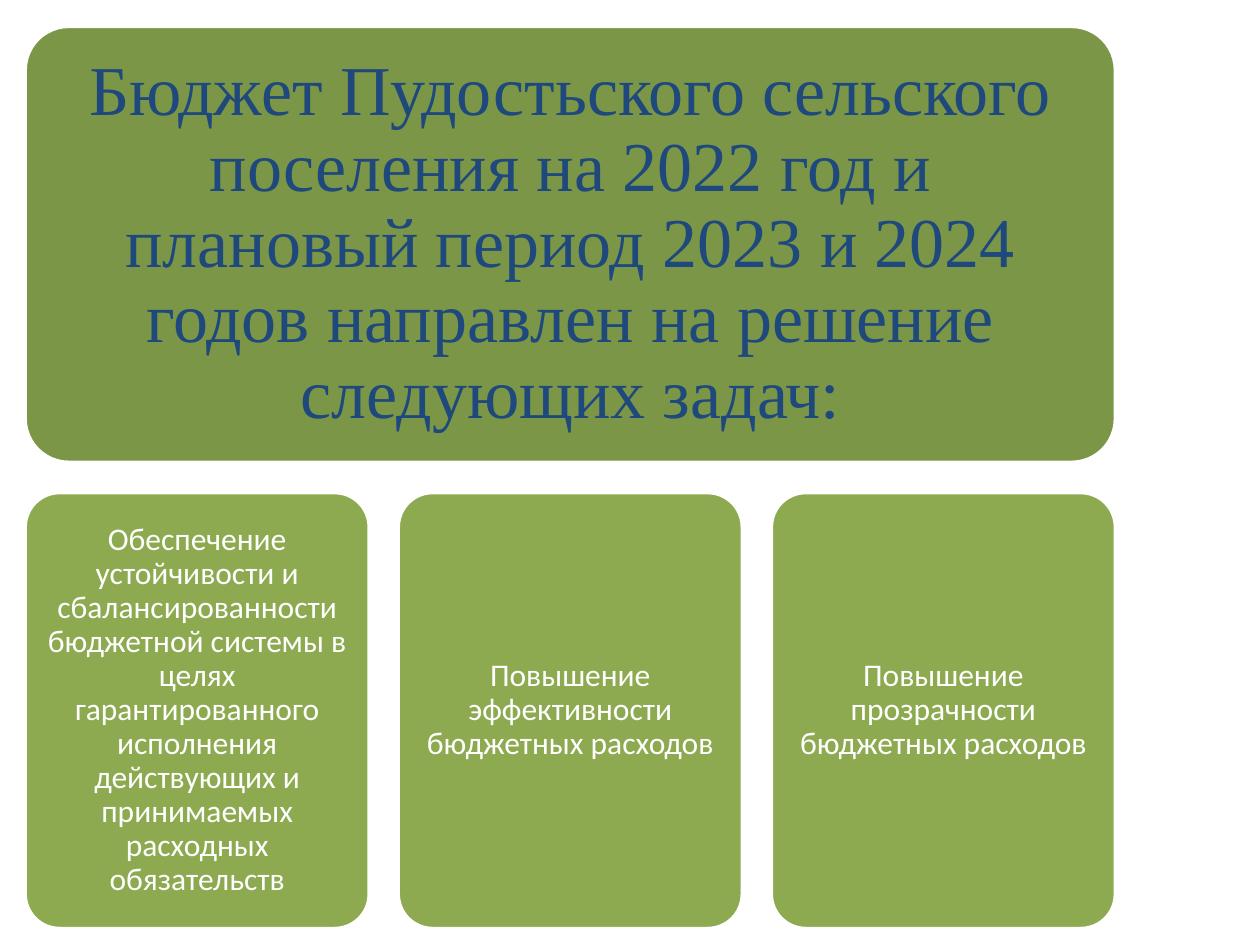
from dataclasses import dataclass

from pptx import Presentation
from pptx.dml.color import RGBColor
from pptx.enum.shapes import MSO_SHAPE
from pptx.enum.text import MSO_ANCHOR, PP_ALIGN
from pptx.util import Pt

ROUNDED = MSO_SHAPE.ROUNDED_RECTANGLE
MIDDLE = MSO_ANCHOR.MIDDLE
CENTER = PP_ALIGN.CENTER

COLORS = {
    "heading": "7C9647",
    "task": "8DAA51",
    "navy": "1F497D",
    "white": "FFFFFF",
}

LEFT, WIDTH, HEIGHT = 14.4, 623, 249.1
HEADING_TOP, TASK_TOP = 15.1, 281.5
GAP = 16.6

HEADING = (
    "Бюджет Пудостьского сельского поселения на 2022 год и плановый период "
    "2023 и 2024 годов направлен на решение следующих задач:"
)
TASKS = [
    "Обеспечение устойчивости и сбалансированности бюджетной системы в целях "
    "гарантированного исполнения действующих и принимаемых расходных обязательств",
    "Повышение эффективности бюджетных расходов",
    "Повышение прозрачности бюджетных расходов",
]


@dataclass(frozen=True)
class BlockStyle:
    fill: str
    color: str
    font: str
    size: float
    margin: float


HEADING_STYLE = BlockStyle("heading", "navy", "Times New Roman", 40, 12)
TASK_STYLE = BlockStyle("task", "white", "Calibri", 18, 5.4)


def rgb(name: str) -> RGBColor:
    return RGBColor.from_string(COLORS[name])


def add_block(s, left: float, top: float, width: float, text: str,
              style: BlockStyle) -> None:
    sp = s.shapes.add_shape(ROUNDED, Pt(left), Pt(top), Pt(width), Pt(HEIGHT))
    sp.adjustments[0] = 0.1
    sp.shadow.inherit = False
    sp.fill.solid()
    sp.fill.fore_color.rgb = rgb(style.fill)
    sp.line.color.rgb = rgb("white")
    sp.line.width = Pt(2)

    tf = sp.text_frame
    margin = Pt(style.margin)
    frame_format = {
        "word_wrap": True, "vertical_anchor": MIDDLE,
        "margin_left": margin, "margin_top": margin,
        "margin_right": margin, "margin_bottom": margin,
    }
    for name, value in frame_format.items():
        setattr(tf, name, value)

    p = tf.paragraphs[0]
    p.alignment = CENTER
    p.line_spacing = 0.9
    r = p.add_run()
    r.text = text
    for name, value in {"name": style.font, "size": Pt(style.size)}.items():
        setattr(r.font, name, value)
    r.font.color.rgb = rgb(style.color)


def main() -> None:
    prs = Presentation()
    prs.slide_width, prs.slide_height = Pt(720), Pt(540)
    s = prs.slides.add_slide(prs.slide_layouts[6])

    add_block(s, LEFT, HEADING_TOP, WIDTH, HEADING, HEADING_STYLE)
    task_width = (WIDTH - GAP * (len(TASKS) - 1)) / len(TASKS)
    for i, task in enumerate(TASKS):
        left = LEFT + i * (task_width + GAP)
        add_block(s, left, TASK_TOP, task_width, task, TASK_STYLE)

    prs.save("out.pptx")


if __name__ == "__main__":
    main()
